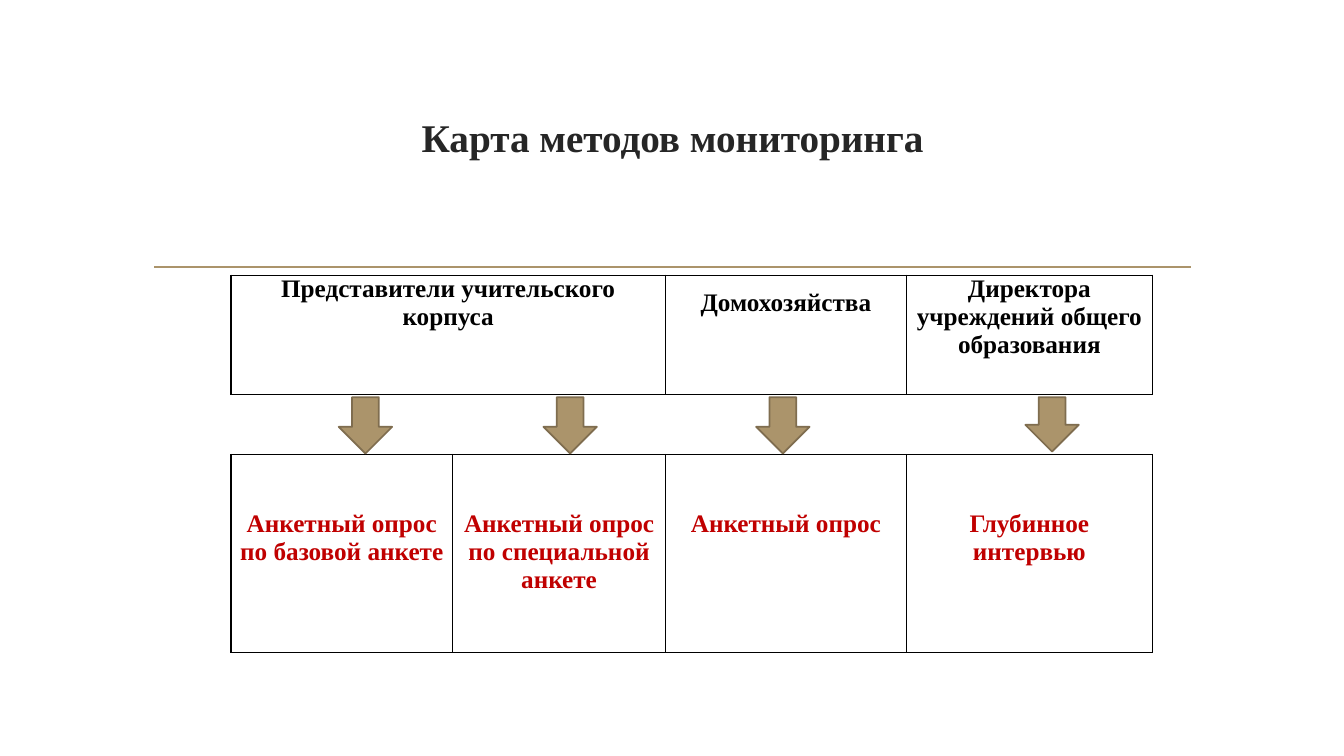
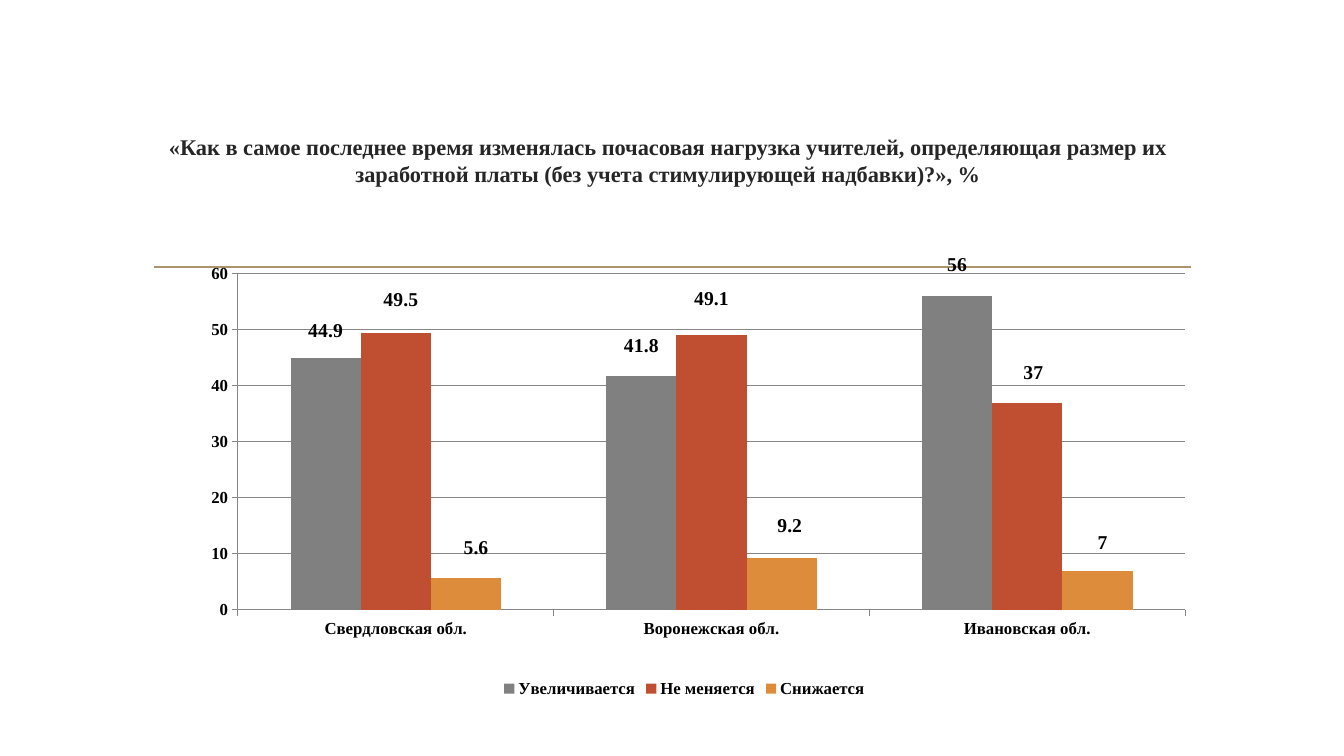
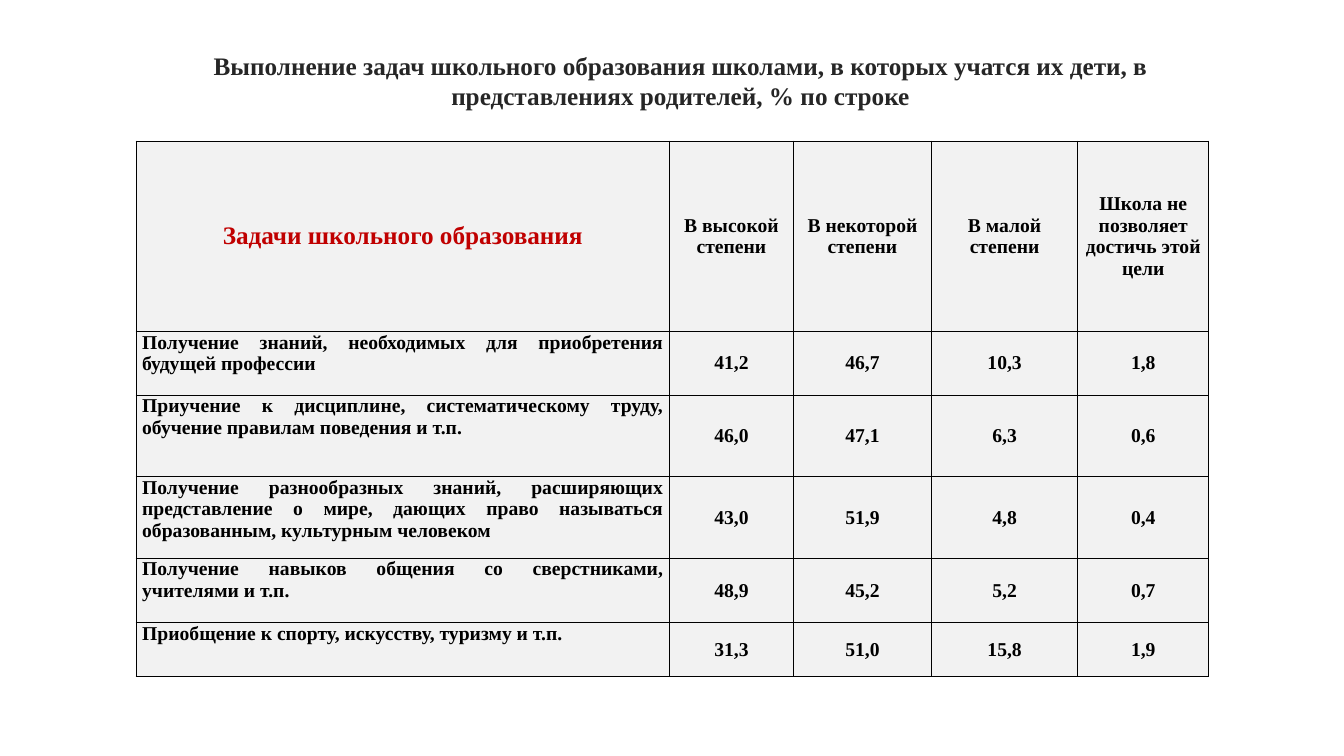
from dataclasses import dataclass

from lxml import etree
from pptx import Presentation
from pptx.chart.data import CategoryChartData
from pptx.dml.color import RGBColor
from pptx.enum.chart import XL_CHART_TYPE, XL_LABEL_POSITION, XL_LEGEND_POSITION, XL_TICK_MARK
from pptx.enum.shapes import MSO_CONNECTOR, MSO_SHAPE
from pptx.enum.text import MSO_ANCHOR, PP_ALIGN
from pptx.oxml.ns import qn
from pptx.util import Emu, Pt

SCALE = 9144  # EMU in one px, 100 px to the inch
CENTER, JUSTIFY = PP_ALIGN.CENTER, PP_ALIGN.JUSTIFY
TOP, MIDDLE = MSO_ANCHOR.TOP, MSO_ANCHOR.MIDDLE
COLUMNS = XL_CHART_TYPE.COLUMN_CLUSTERED
LEGEND_BOTTOM = XL_LEGEND_POSITION.BOTTOM
ABOVE_BAR = XL_LABEL_POSITION.OUTSIDE_END
TICK_OUT = XL_TICK_MARK.OUTSIDE
STRAIGHT = MSO_CONNECTOR.STRAIGHT
DOWN_ARROW = MSO_SHAPE.DOWN_ARROW


@dataclass(frozen=True)
class Theme:
    font: str = "Times New Roman"
    title: str = "262626"
    ink: str = "000000"
    strong: str = "C00000"
    accent: str = "AB946B"
    accent_dark: str = "7F6D4F"
    cell: str = "F2F2F2"
    grid: str = "868686"
    series: tuple = ("808080", "C04F32", "DD8C3C")
    title_big: int = 28
    large: int = 18
    title_small: int = 16
    body: int = 14
    axis: int = 12
    chart: int = 10
    line: float = 1.25
    border: float = 1


THEME = Theme()


def px(length):
    return Emu(length * SCALE)


def rgb(color):
    return RGBColor.from_string(color)


def set_font(font, size, color=THEME.ink, bold=True):
    font.name, font.size, font.bold = THEME.font, Pt(size), bold
    font.color.rgb = rgb(color)


def write_text(frame, text, size=THEME.body, color=THEME.ink, align=CENTER, spacing=None):
    para = frame.paragraphs[0]
    para.text = text
    para.alignment = align
    if spacing:
        para.line_spacing = spacing
    for span in para.runs:
        set_font(span.font, size, color)


def set_outline(line, color, width):
    line.color.rgb = rgb(color)
    line.width = Pt(width)


def set_borders(cell, sides):
    """Draw the named sides (L, R, T, B) and clear the others."""
    properties = cell._tc.get_or_add_tcPr()
    for side in "LRTB":
        border = etree.SubElement(properties, qn(f"a:ln{side}"), w=str(Pt(THEME.border)))
        if side in sides:
            fill = etree.SubElement(border, qn("a:solidFill"))
            etree.SubElement(fill, qn("a:srgbClr"), val=THEME.ink)
        else:
            etree.SubElement(border, qn("a:noFill"))


def manual_layout(**settings):
    """Build a chart layout element from its settings, in schema order."""
    layout = etree.Element(qn("c:layout"))
    manual = etree.SubElement(layout, qn("c:manualLayout"))
    for name, value in settings.items():
        etree.SubElement(manual, qn(f"c:{name}"), val=str(value))
    return layout


class Deck:
    """Holds the presentation and the page being drawn."""

    def __init__(self, width, height):
        self.show = Presentation()
        self.show.slide_width, self.show.slide_height = px(width), px(height)
        self.page = None

    def new_page(self, title, box, size):
        self.page = self.show.slides.add_slide(self.show.slide_layouts[6])
        self.rule()
        frame = self.page.shapes.add_textbox(*map(px, box)).text_frame
        frame.word_wrap = True
        frame.vertical_anchor = MIDDLE
        write_text(frame, title, size=size, color=THEME.title)

    def rule(self):
        ends = map(px, (153, 265, 1181, 265))
        line = self.page.shapes.add_connector(STRAIGHT, *ends)
        set_outline(line.line, THEME.accent, THEME.line)
        etree.SubElement(line._element.spPr, qn("a:effectLst"))

    def down_arrow(self, left, top, width, height):
        arrow = self.page.shapes.add_shape(DOWN_ARROW, *map(px, (left, top, width, height)))
        arrow.shadow.inherit = False
        arrow.fill.solid()
        arrow.fill.fore_color.rgb = rgb(THEME.accent)
        set_outline(arrow.line, THEME.accent_dark, THEME.line)

    def table(self, left, top, widths, heights, fill=None, open_rows=()):
        """Add an empty bordered table; open_rows have no side borders."""
        size = map(px, (left, top, sum(widths), sum(heights)))
        table = self.page.shapes.add_table(len(heights), len(widths), *size).table
        table.first_row = table.horz_banding = False
        for column, width in zip(table.columns, widths):
            column.width = px(width)
        for index, (row, height) in enumerate(zip(table.rows, heights)):
            row.height = px(height)
            for cell in row.cells:
                set_borders(cell, "TB" if index in open_rows else "LRTB")
                if fill:
                    cell.fill.solid()
                    cell.fill.fore_color.rgb = rgb(fill)
                else:
                    cell.fill.background()
        return table

    def cell(self, cell, text, inset=6, top=0, anchor=MIDDLE, **text_format):
        cell.margin_left = cell.margin_right = px(inset)
        cell.margin_top, cell.margin_bottom = px(top), px(0)
        cell.vertical_anchor = anchor
        write_text(cell.text_frame, text, **text_format)

    def column_chart(self, box, categories, series, plot_area, top_value, step):
        """series maps a name to its values and its label shifts in px."""
        data = CategoryChartData()
        data.categories = categories
        for name, (values, _) in series.items():
            data.add_series(name, values)
        chart = self.page.shapes.add_chart(COLUMNS, *map(px, box), data).chart
        set_font(chart.font, THEME.chart, bold=False)
        chart.has_title = False
        chart.has_legend = True
        chart.legend.position = LEGEND_BOTTOM
        chart.legend.include_in_layout = False
        set_font(chart.legend.font, THEME.axis)

        for axis in (chart.category_axis, chart.value_axis):
            axis.major_tick_mark = TICK_OUT
            set_font(axis.tick_labels.font, THEME.axis)
            set_outline(axis.format.line, THEME.grid, 0.75)
        scale = chart.value_axis
        scale.minimum_scale, scale.maximum_scale, scale.major_unit = 0, top_value, step
        set_outline(scale.major_gridlines.format.line, THEME.grid, 0.75)

        plot = chart.plots[0]
        plot.vary_by_categories = False
        plot.gap_width, plot.overlap = 150, 0
        for bars, color in zip(plot.series, THEME.series):
            bars.format.fill.solid()
            bars.format.fill.fore_color.rgb = rgb(color)
            for index in range(len(categories)):
                label = bars.points[index].data_label
                set_font(label.font, THEME.body)
                label.position = ABOVE_BAR

        shifts = [shift for _, moves in series.values() for shift in moves]
        for label, (right, down) in zip(chart.element.iter(qn("c:dLbl")), shifts):
            layout = manual_layout(x=right / box[2], y=down / box[3])
            label.find(qn("c:idx")).addnext(layout)
        for leader in chart.element.iter(qn("c:showLeaderLines")):
            leader.set("val", "0")
        area = next(chart.element.iter(qn("c:plotArea")))
        for old in area.findall(qn("c:layout")):
            area.remove(old)
        left, top, width, height = plot_area
        area.insert(0, manual_layout(
            layoutTarget="inner", xMode="edge", yMode="edge",
            x=left / box[2], y=top / box[3], w=width / box[2], h=height / box[3]))


def methods_page(deck):
    deck.new_page("Карта методов мониторинга", (142, 107, 1050, 57), THEME.title_big)
    table = deck.table(229, 273, (220, 211, 239, 244), (118, 60, 196), open_rows=(1,))
    table.cell(0, 0).merge(table.cell(0, 1))
    groups = (
        (0, "Представители учительского корпуса", None),
        (2, "Домохозяйства", 1.5),
        (3, "Директора учреждений общего образования", None),
    )
    for column, text, spacing in groups:
        deck.cell(table.cell(0, column), text, inset=7, anchor=TOP,
                  size=THEME.large, spacing=spacing)
    methods = (
        "Анкетный опрос по базовой анкете",
        "Анкетный опрос по специальной анкете",
        "Анкетный опрос",
        "Глубинное\nинтервью",
    )
    for column, text in enumerate(methods):
        deck.cell(table.cell(2, column), text, inset=7, top=55, anchor=TOP,
                  size=THEME.large, color=THEME.strong)
    for left, height in ((336, 56), (539, 56), (750, 56), (1017, 54)):
        deck.down_arrow(left, 394, 53, height)


def workload_page(deck):
    deck.new_page(
        "«Как в самое последнее время изменялась почасовая нагрузка учителей, "
        "определяющая размер их заработной платы (без учета стимулирующей надбавки)?», %",
        (121, 93, 1083, 131), THEME.title_small)
    deck.column_chart(
        (182, 252, 994, 444),
        ("Свердловская обл.", "Воронежская обл.", "Ивановская обл."),
        {
            "Увеличивается": ((44.9, 41.8, 56), ((0, -13), (0, -15), (0, -16))),
            "Не меняется": ((49.5, 49.1, 37), ((5, -18), (0, -21), (6, -15))),
            "Снижается": ((5.6, 9.2, 7), ((10, -16), (8, -18), (5, -13))),
        },
        plot_area=(54, 19, 940, 334), top_value=60, step=10)


def tasks_page(deck):
    deck.new_page(
        "Выполнение задач школьного образования школами, в которых учатся их дети, "
        "в представлениях родителей, % по строке",
        (200, 50, 950, 59), THEME.large)
    table = deck.table(135, 140, (529, 123, 137, 145, 130),
                       (189, 63, 81, 81, 64, 53), fill=THEME.cell)
    deck.cell(table.cell(0, 0), "Задачи школьного образования",
              size=THEME.large, color=THEME.strong)
    degrees = ("В высокой степени", "В некоторой степени", "В малой степени",
               "Школа не позволяет достичь этой цели")
    for column, text in enumerate(degrees, 1):
        deck.cell(table.cell(0, column), text)
    tasks = (
        ("Получение знаний, необходимых для приобретения будущей профессии",
         "41,2", "46,7", "10,3", "1,8"),
        ("Приучение к дисциплине, систематическому труду, обучение правилам поведения и т.п.",
         "46,0", "47,1", "6,3", "0,6"),
        ("Получение разнообразных знаний, расширяющих представление о мире, "
         "дающих право называться образованным, культурным человеком",
         "43,0", "51,9", "4,8", "0,4"),
        ("Получение навыков общения со сверстниками, учителями и т.п.",
         "48,9", "45,2", "5,2", "0,7"),
        ("Приобщение к спорту, искусству, туризму и т.п.",
         "31,3", "51,0", "15,8", "1,9"),
    )
    for row, (task, *shares) in enumerate(tasks, 1):
        deck.cell(table.cell(row, 0), task, anchor=TOP, align=JUSTIFY)
        for column, share in enumerate(shares, 1):
            deck.cell(table.cell(row, column), share)


def main():
    deck = Deck(1333, 750)
    methods_page(deck)
    workload_page(deck)
    tasks_page(deck)
    deck.show.save("out.pptx")


if __name__ == "__main__":
    main()
